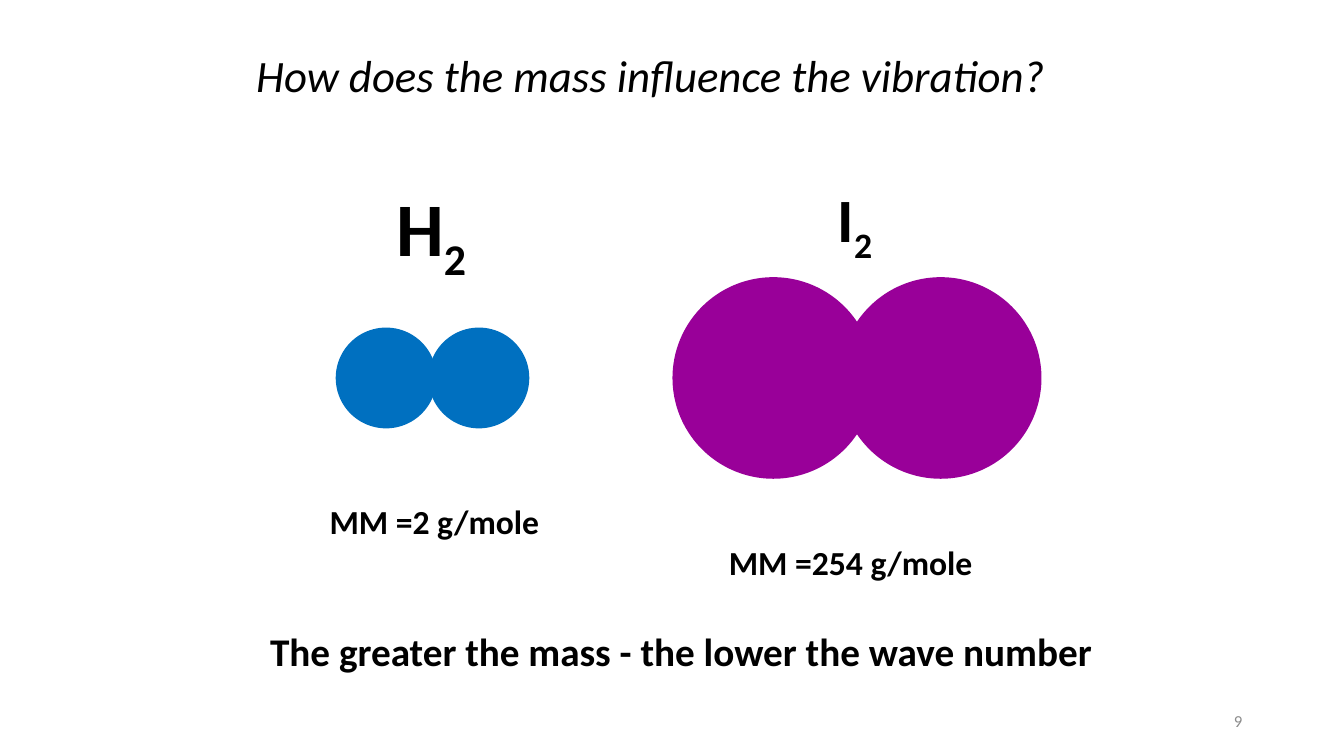
from pptx import Presentation
from pptx.dml.color import RGBColor
from pptx.enum.shapes import MSO_SHAPE
from pptx.enum.text import MSO_ANCHOR, MSO_AUTO_SIZE, PP_ALIGN
from pptx.util import Inches, Pt

FONT = "Calibri"
BLACK, GREY = "000000", "8C8C8C"
ATOM_CENTRE_Y = 3.75

TITLE = "How does the mass influence the vibration?"
TITLE_BOX = (2.44, 0.42, 8.12, 0.64)
CONCLUSION = "The greater the mass - the lower the wave number"
CONCLUSION_BOX = (2.58, 6.17, 9.08, 0.57)
PAGE_NUMBER = "9"
PAGE_NUMBER_BOX = (9.42, 6.95, 3, 0.4)

MOLECULES = [
    {"element": "H", "formula_box": (3.83, 1.75, 0.94, 1.01), "formula_size": 54,
     "mass": "MM =2 g/mole", "mass_box": (3.17, 4.92, 2.34, 0.5),
     "atom_lefts": (3.33, 4.25), "diameter": 1, "color": "0070C0"},
    {"element": "I", "formula_box": (8.21, 1.75, 0.58, 0.84), "formula_size": 44,
     "mass": "MM =254 g/mole", "mass_box": (7.13, 5.33, 2.64, 0.5),
     "atom_lefts": (6.67, 8.33), "diameter": 2, "color": "990099"},
]


def rgb(color):
    return RGBColor.from_string(color)


def style_run(run, size, color=BLACK, bold=False, italic=False):
    run.font.name = FONT
    run.font.size = Pt(size)
    run.font.color.rgb = rgb(color)
    run.font.bold = bold
    run.font.italic = italic


def add_label(slide, box, text, size, color=BLACK, bold=True):
    label = slide.shapes.add_textbox(*map(Inches, box))
    label.text_frame.word_wrap = True
    label.text_frame.text = text
    style_run(label.text_frame.paragraphs[0].runs[0], size, color, bold)
    return label.text_frame


def add_title(slide):
    title = slide.shapes.title
    title.left, title.top, title.width, title.height = map(Inches, TITLE_BOX)
    frame = title.text_frame
    frame.text = TITLE
    frame.auto_size = MSO_AUTO_SIZE.NONE
    frame.vertical_anchor = MSO_ANCHOR.TOP
    frame.paragraphs[0].alignment = PP_ALIGN.LEFT
    style_run(frame.paragraphs[0].runs[0], 32, italic=True)


def add_molecule(slide, molecule):
    """Draw two touching atoms with the formula above and the molar mass below."""
    diameter = molecule["diameter"]
    top = ATOM_CENTRE_Y - diameter / 2
    for left in molecule["atom_lefts"]:
        atom = slide.shapes.add_shape(
            MSO_SHAPE.OVAL, *map(Inches, (left, top, diameter, diameter)))
        atom.shadow.inherit = False
        atom.fill.solid()
        atom.fill.fore_color.rgb = rgb(molecule["color"])
        atom.line.fill.background()

    size = molecule["formula_size"]
    formula = add_label(slide, molecule["formula_box"], molecule["element"], size)
    formula.word_wrap = False
    subscript = formula.paragraphs[0].add_run()
    subscript.text = "2"
    style_run(subscript, size, bold=True)
    subscript.font._element.set("baseline", "-25000")

    add_label(slide, molecule["mass_box"], molecule["mass"], 24)


def main():
    prs = Presentation()
    prs.slide_width, prs.slide_height = Inches(13.33), Inches(7.5)
    slide = prs.slides.add_slide(prs.slide_layouts[5])
    add_title(slide)
    for molecule in MOLECULES:
        add_molecule(slide, molecule)
    add_label(slide, CONCLUSION_BOX, CONCLUSION, 28)
    page_number = add_label(slide, PAGE_NUMBER_BOX, PAGE_NUMBER, 12, GREY, bold=False)
    page_number.vertical_anchor = MSO_ANCHOR.MIDDLE
    page_number.paragraphs[0].alignment = PP_ALIGN.RIGHT
    prs.save("out.pptx")


if __name__ == "__main__":
    main()
